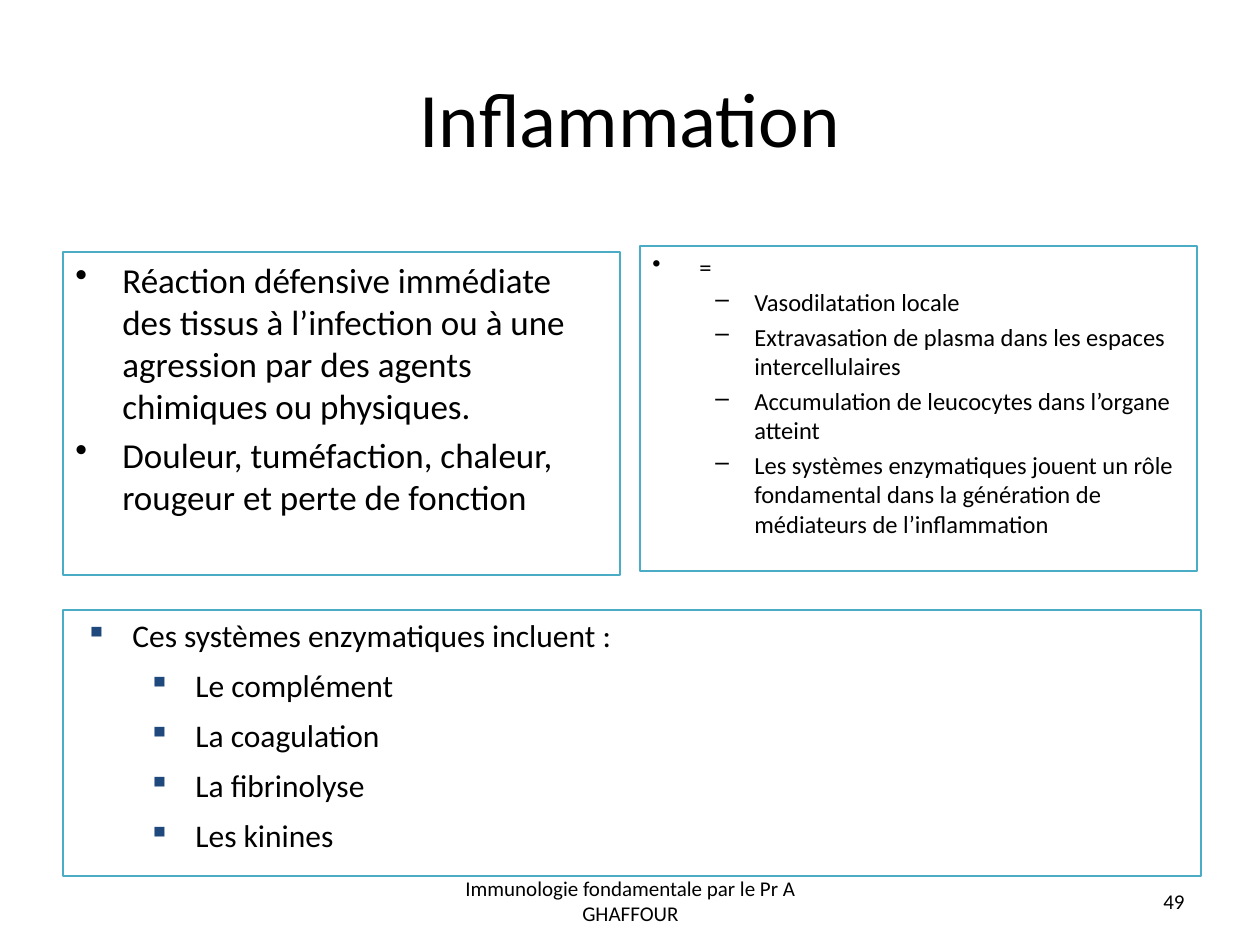
"""Build the slide on inflammation and its enzymatic systems."""
from lxml import etree
from pptx import Presentation
from pptx.dml.color import RGBColor
from pptx.enum.shapes import MSO_SHAPE
from pptx.enum.text import MSO_ANCHOR, PP_ALIGN
from pptx.oxml.ns import qn
from pptx.util import Pt

LEFT, CENTER, RIGHT = PP_ALIGN.LEFT, PP_ALIGN.CENTER, PP_ALIGN.RIGHT
TOP, MIDDLE = MSO_ANCHOR.TOP, MSO_ANCHOR.MIDDLE
RECTANGLE = MSO_SHAPE.RECTANGLE
PX = 914400 / 126


def color(value):
    """Turn a hex string into a colour."""
    return RGBColor.from_string(value)


def write(shape, anchor, items):
    """Fill a shape with (text, paragraph format, size) items and return its paragraphs."""
    frame = shape.text_frame
    frame.word_wrap = True
    frame.vertical_anchor = anchor
    for index, (text, paragraph_format, size) in enumerate(items):
        paragraph = frame.paragraphs[0] if index == 0 else frame.add_paragraph()
        for name, value in paragraph_format.items():
            setattr(paragraph, name, value)
        run = paragraph.add_run()
        run.text = text
        for name, value in {"name": "Calibri", "size": Pt(size)}.items():
            setattr(run.font, name, value)
        run.font.color.rgb = color("000000")
    return frame.paragraphs


presentation = Presentation()
presentation.slide_width = round(1260 * PX)
presentation.slide_height = round(945 * PX)
slide = presentation.slides.add_slide(presentation.slide_layouts[6])

labels = [
    ((63, 38, 1134, 157), "Inflammation", CENTER, 44),
    ((431, 876, 399, 50), "Immunologie fondamentale par le Pr A GHAFFOUR", CENTER, 12),
    ((903, 876, 294, 50), "49", RIGHT, 12),
]
for box, text, alignment, size in labels:
    textbox = slide.shapes.add_textbox(*(round(length * PX) for length in box))
    write(textbox, MIDDLE, [(text, {"alignment": alignment}, size)])

round_bullet = {"margin": 47, "hanging": 47, "char": "•"}
dash_bullet = {"margin": 102, "hanging": 39, "char": "–"}
square_bullet = {"margin": 57, "hanging": 47, "char": "▪", "color": "1F497D", "size": 95}
inner_square_bullet = {**square_bullet, "margin": 120}

panels = [
    ((63, 252, 557, 323), 20, 4, [round_bullet, round_bullet], [
        "Réaction défensive immédiate des tissus à l’infection ou à une agression "
        "par des agents chimiques ou physiques.",
        "Douleur, tuméfaction, chaleur, rougeur et perte de fonction",
    ]),
    ((640, 246, 557, 325), 14, 3, [round_bullet] + [dash_bullet] * 4, [
        "=",
        "Vasodilatation locale",
        "Extravasation de plasma dans les espaces intercellulaires",
        "Accumulation de leucocytes dans l’organe atteint",
        "Les systèmes enzymatiques jouent un rôle fondamental dans la génération "
        "de médiateurs de l’inflammation",
    ]),
    ((63, 610, 1138, 266), 18, 7, [square_bullet] + [inner_square_bullet] * 4, [
        "Ces systèmes enzymatiques incluent :",
        "Le complément",
        "La coagulation",
        "La fibrinolyse",
        "Les kinines",
    ]),
]
for box, size, space, bullets, texts in panels:
    panel = slide.shapes.add_shape(RECTANGLE, *(round(length * PX) for length in box))
    panel.shadow.inherit = False
    panel.fill.background()
    panel.line.color.rgb = color("4BACC6")
    panel.line.width = Pt(0.75)
    items = [
        (text, {"alignment": LEFT, "space_before": Pt(space), "level": int(bullet["margin"] > 100)}, size)
        for text, bullet in zip(texts, bullets)
    ]
    for paragraph, bullet in zip(write(panel, TOP, items), bullets):
        properties = paragraph._p.get_or_add_pPr()
        properties.set("marL", str(round(bullet["margin"] * PX)))
        properties.set("indent", str(round(-bullet["hanging"] * PX)))
        if "color" in bullet:
            bullet_color = etree.SubElement(properties, qn("a:buClr"))
            etree.SubElement(bullet_color, qn("a:srgbClr"), val=bullet["color"])
            etree.SubElement(properties, qn("a:buSzPct"), val=str(bullet["size"] * 1000))
        etree.SubElement(properties, qn("a:buChar"), char=bullet["char"])

presentation.save("out.pptx")
